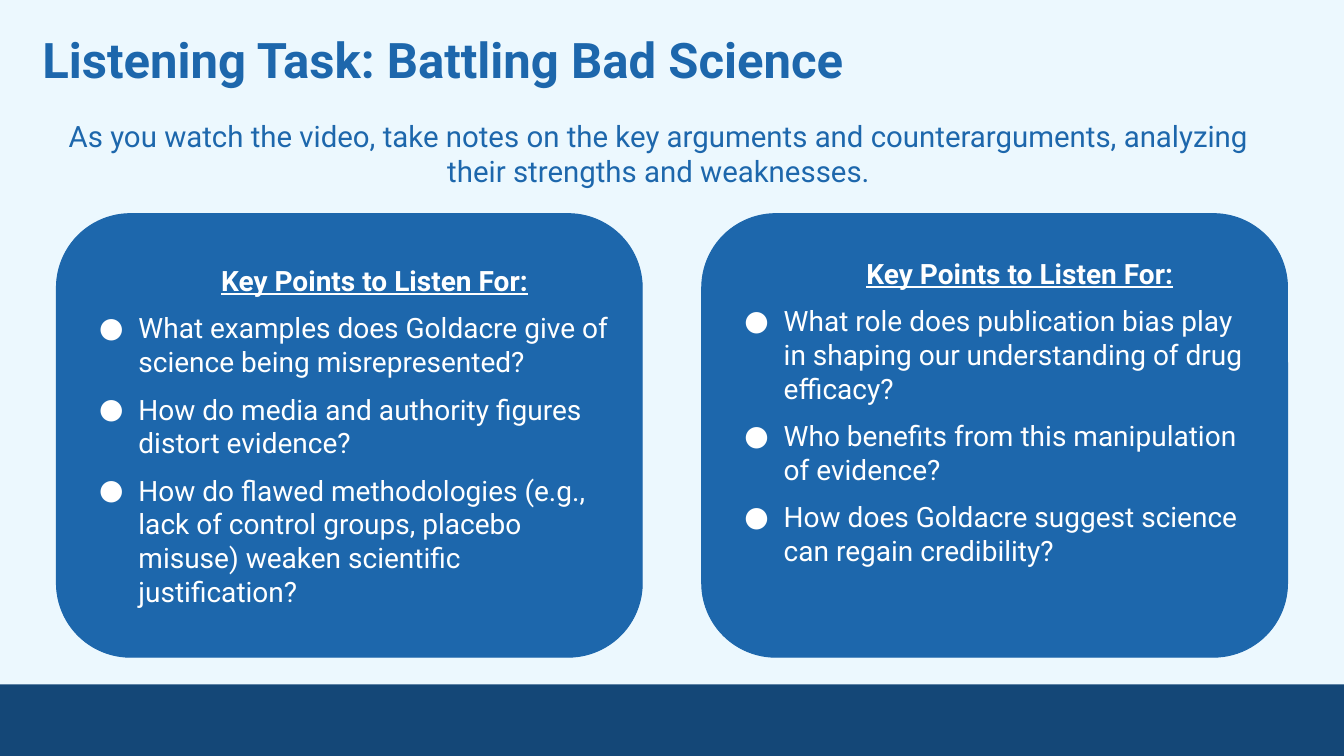
from lxml import etree
from pptx import Presentation
from pptx.dml.color import RGBColor
from pptx.enum import shapes, text
from pptx.oxml import ns
from pptx.util import Inches, Pt

COLORS = {"background": "ECF8FE", "blue": "1D67AC", "navy": "144777", "white": "FFFFFF"}
FONT = "Roboto"
HEADING = "Key Points to Listen For:"
LEFT_QUESTIONS = [
    "What examples does Goldacre give of science being misrepresented?",
    "How do media and authority figures distort evidence?",
    "How do flawed methodologies (e.g., lack of control groups, placebo misuse) "
    "weaken scientific justification?",
]
RIGHT_QUESTIONS = [
    "What role does publication bias play in shaping our understanding of drug efficacy?",
    "Who benefits from this manipulation of evidence?",
    "How does Goldacre suggest science can regain credibility?",
]


def color(name):
    return RGBColor.from_string(COLORS[name])


def format_runs(paragraph, size, color_name, bold=False, underline=False):
    for run in paragraph.runs:
        run.font.name = FONT
        run.font.size = Pt(size)
        run.font.bold = bold
        run.font.underline = underline
        run.font.color.rgb = color(color_name)


def set_frame(frame, margin, anchor):
    frame.word_wrap = True
    frame.auto_size = text.MSO_AUTO_SIZE.NONE
    frame.vertical_anchor = anchor
    frame.margin_left = frame.margin_right = Inches(margin)
    frame.margin_top = frame.margin_bottom = Inches(margin)


def indent(paragraph, first_line, bullet=False):
    properties = paragraph._p.get_or_add_pPr()
    properties.set("marL", str(Inches(0.5)))
    properties.set("indent", str(Inches(first_line)))
    if bullet:
        bullet_color = etree.SubElement(properties, ns.qn("a:buClr"))
        etree.SubElement(bullet_color, ns.qn("a:srgbClr"), val=COLORS["white"])
        etree.SubElement(properties, ns.qn("a:buFont"), typeface=FONT)
        etree.SubElement(properties, ns.qn("a:buChar"), char="●")


def add_block(slide, preset, left, top, width, height, color_name):
    shape = slide.shapes.add_shape(
        preset, Inches(left), Inches(top), Inches(width), Inches(height))
    shape.shadow.inherit = False
    shape.fill.solid()
    shape.fill.fore_color.rgb = color(color_name)
    shape.line.fill.background()
    return shape


def set_title(slide, wording):
    title = slide.shapes.title
    title.left, title.top = Inches(0.29), Inches(0.16)
    title.width, title.height = Inches(12.19), Inches(0.86)
    title.text_frame.text = wording
    set_frame(title.text_frame, 0.13, text.MSO_ANCHOR.TOP)
    paragraph = title.text_frame.paragraphs[0]
    paragraph.alignment = text.PP_ALIGN.LEFT
    format_runs(paragraph, 35, "blue", bold=True)


def add_instruction(slide, wording):
    box = slide.shapes.add_textbox(Inches(0.29), Inches(1.07), Inches(12.48), Inches(0.91))
    box.text_frame.text = wording
    set_frame(box.text_frame, 0.1, text.MSO_ANCHOR.TOP)
    paragraph = box.text_frame.paragraphs[0]
    paragraph.alignment = text.PP_ALIGN.CENTER
    format_runs(paragraph, 21, "blue")


def add_card(slide, left, questions, bottom_margin):
    card = add_block(
        slide, shapes.MSO_SHAPE.ROUNDED_RECTANGLE, left, 2.12, 5.81, 4.4, "blue")
    card.adjustments[0] = 0.167
    card.line.color.rgb = color("blue")
    card.line.width = Pt(0.75)
    frame = card.text_frame
    set_frame(frame, 0.1, text.MSO_ANCHOR.MIDDLE)
    frame.margin_bottom = Inches(bottom_margin)
    frame.text = HEADING
    heading = frame.paragraphs[0]
    heading.alignment = text.PP_ALIGN.CENTER
    indent(heading, 0)
    format_runs(heading, 20, "white", bold=True, underline=True)
    for question in questions:
        paragraph = frame.add_paragraph()
        paragraph.text = question
        paragraph.alignment = text.PP_ALIGN.LEFT
        indent(paragraph, -0.39, bullet=True)
        paragraph.space_before = Pt(10)
        format_runs(paragraph, 20, "white")


def main():
    presentation = Presentation()
    presentation.slide_width = Inches(13.33)
    presentation.slide_height = Inches(7.5)
    slide = presentation.slides.add_slide(presentation.slide_layouts[5])
    slide.background.fill.solid()
    slide.background.fill.fore_color.rgb = color("background")
    add_block(slide, shapes.MSO_SHAPE.RECTANGLE, 0, 6.79, 13.33, 0.71, "navy")
    set_title(slide, "Listening Task: Battling Bad Science")
    add_instruction(
        slide,
        "As you watch the video, take notes on the key arguments and counterarguments, "
        "analyzing their strengths and weaknesses.")
    add_card(slide, 0.56, LEFT_QUESTIONS, 0.1)
    add_card(slide, 6.96, RIGHT_QUESTIONS, 0.57)
    presentation.save("out.pptx")


if __name__ == "__main__":
    main()
